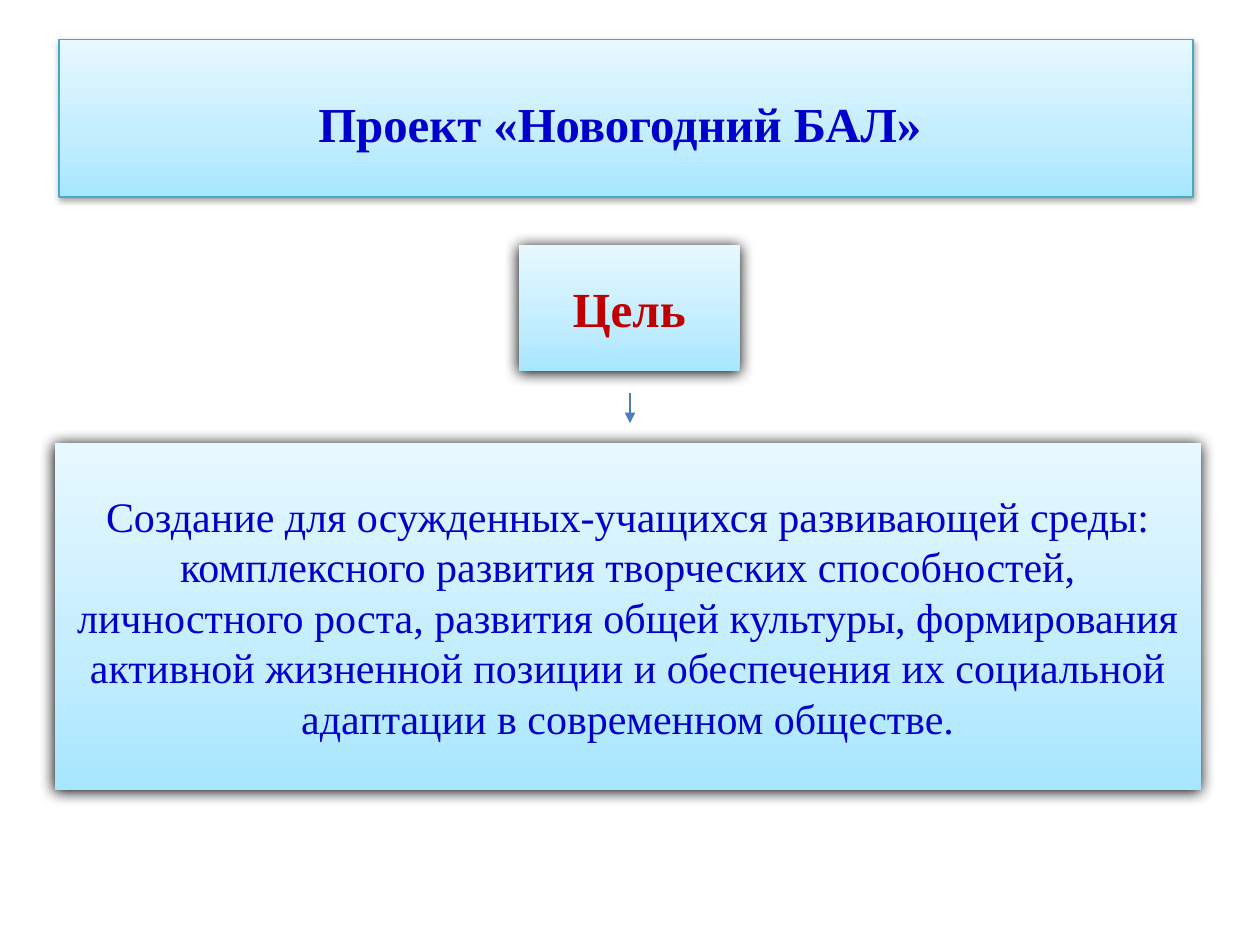
from lxml import etree
from pptx import Presentation
from pptx import util as u
from pptx.dml.color import RGBColor
from pptx.enum import shapes, text
from pptx.oxml import parse_xml
from pptx.oxml.ns import nsdecls, qn

# Content: words, place in cm (left, top, width, height), style name
TITLE = ("Проект «Новогодний БАЛ»", (1.19, 0.79, 22.86, 3.18), "title")
BOXES = [
    ("Цель", (10.46, 4.94, 4.45, 2.54), "goal"),
    ("Создание для осужденных-учащихся развивающей среды: комплексного "
     "развития творческих способностей, личностного роста, развития общей "
     "культуры, формирования активной жизненной позиции и обеспечения их "
     "социальной адаптации в современном обществе.",
     (1.1, 8.93, 23.11, 7), "body"),
]
ARROW = (12.7, 7.92, 12.7, 8.53)

THEME = {
    "font": "Times New Roman",
    "grad": [(0, "A7E6FF"), (35, "C1EDFF"), (100, "E7F8FF")],
    "edge": "46AAC5",
    "arrow": "4B7EBC",
    "width": 0.75,
    # size, bold, colour, shadow (opacity %, blur pt, distance pt)
    "title": (27.9, True, "0000CC", (38, 3.1, 1.6)),
    "goal": (28, True, "C00000", (100, 8.5, 1)),
    "body": (24, False, "0000CC", (100, 8.5, 1)),
}


def rgb(code):
    return RGBColor.from_string(code)


def shade(shape, alpha, blur, dist):
    """Give the shape a soft shadow that falls downwards."""
    shape.shadow.inherit = False
    shape._element.spPr.find(qn("a:effectLst")).append(parse_xml(
        f'<a:outerShdw {nsdecls("a")} blurRad="{u.Pt(blur)}" '
        f'dist="{u.Pt(dist)}" dir="5400000" rotWithShape="0">'
        f'<a:srgbClr val="000000"><a:alpha val="{alpha * 1000}"/>'
        '</a:srgbClr></a:outerShdw>'))


def paint(shape):
    """Fill the shape with the three-stop gradient, light at the top."""
    shape.fill.gradient()
    shape.fill.gradient_angle = 90
    stops = shape._element.spPr.find(".//" + qn("a:gsLst"))
    for stop in list(stops):
        stops.remove(stop)
    for pos, code in THEME["grad"]:
        stop = etree.SubElement(stops, qn("a:gs"), pos=str(pos * 1000))
        etree.SubElement(stop, qn("a:srgbClr"), val=code)


def write(shape, words, style):
    size, bold, code, shadow = THEME[style]
    paint(shape)
    shade(shape, *shadow)
    frame = shape.text_frame
    frame.word_wrap = True
    frame.auto_size = text.MSO_AUTO_SIZE.NONE
    frame.vertical_anchor = text.MSO_ANCHOR.MIDDLE
    para = frame.paragraphs[0]
    para.alignment = text.PP_ALIGN.CENTER
    run = para.add_run()
    run.text = words
    font = run.font
    font.name, font.size, font.bold = THEME["font"], u.Pt(size), bold
    font.color.rgb = rgb(code)


deck = Presentation()
deck.slide_width, deck.slide_height = u.Cm(25.4), u.Cm(19.05)
slide = deck.slides.add_slide(deck.slide_layouts[5])

# Title bar, its words set slightly left and low
words, place, style = TITLE
title = slide.shapes.title
title.left, title.top, title.width, title.height = map(u.Cm, place)
write(title, words, style)
title.line.color.rgb = rgb(THEME["edge"])
title.line.width = u.Pt(THEME["width"])
title.text_frame.margin_right = u.Cm(0.5)
title.text_frame.margin_top = u.Cm(0.33)

# Goal and its description
for words, place, style in BOXES:
    box = slide.shapes.add_shape(shapes.MSO_SHAPE.RECTANGLE, *map(u.Cm, place))
    write(box, words, style)
    box.line.fill.background()

# Arrow from the goal down to the description
arrow = slide.shapes.add_connector(
    shapes.MSO_CONNECTOR.STRAIGHT, *map(u.Cm, ARROW))
arrow.line.color.rgb = rgb(THEME["arrow"])
arrow.line.width = u.Pt(THEME["width"])
props = arrow._element.spPr
etree.SubElement(props.find(qn("a:ln")), qn("a:tailEnd"), type="triangle")
etree.SubElement(props, qn("a:effectLst"))

deck.save("out.pptx")
